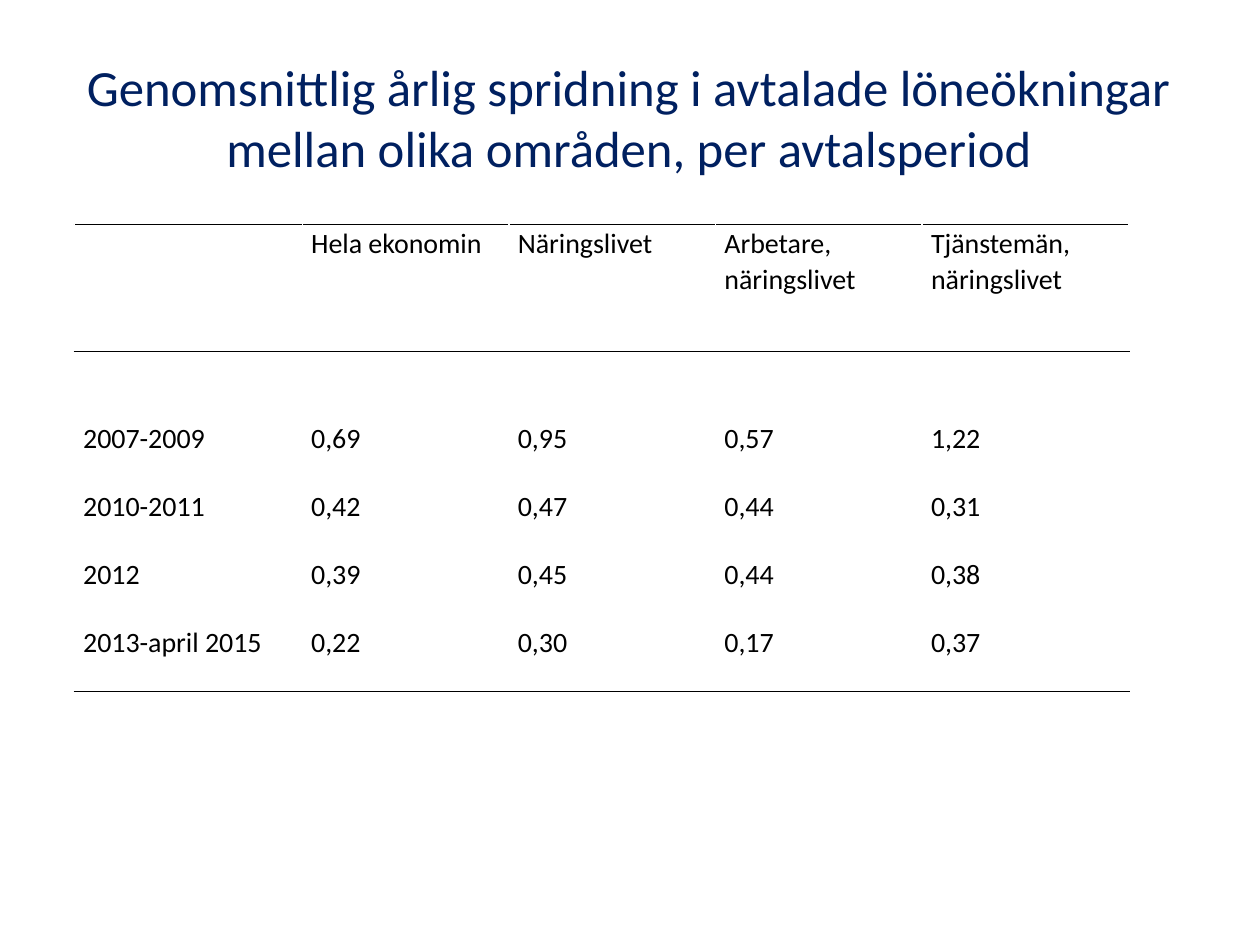
from lxml import etree
from pptx import Presentation
from pptx.dml.color import RGBColor
from pptx.enum.text import MSO_ANCHOR, PP_ALIGN
from pptx.oxml.ns import qn
from pptx.util import Inches, Pt

CENTER = PP_ALIGN.CENTER
MIDDLE = MSO_ANCHOR.MIDDLE
NAVY = RGBColor(0x00, 0x20, 0x60)
BLACK = RGBColor(0x00, 0x00, 0x00)

TITLE = "Genomsnittlig årlig spridning i avtalade löneökningar mellan olika områden, per avtalsperiod"
ROWS = [
    ["", "Hela ekonomin", "Näringslivet", "Arbetare, näringslivet", "Tjänstemän, näringslivet"],
    [""] * 5,
    ["2007-2009", "0,69", "0,95", "0,57", "1,22"],
    ["2010-2011", "0,42", "0,47", "0,44", "0,31"],
    ["2012", "0,39", "0,45", "0,44", "0,38"],
    ["2013-april 2015", "0,22", "0,30", "0,17", "0,37"],
]
COL_WIDTHS = [1.81] + [1.64] * 4
ROW_HEIGHTS = [1.01] + [0.54] * 5
RULES = {0: ("a:lnT", "a:lnB"), 1: ("a:lnT",), 5: ("a:lnB",)}
TITLE_FONT = {"name": "Calibri", "size": Pt(29), "bold": False}
CELL_FONT = {"name": "Calibri", "size": Pt(16), "bold": False}
CELL_FORMAT = {"margin_left": Inches(0.07), "margin_right": Inches(0.07),
               "margin_top": 0, "margin_bottom": 0}
PARA_FORMAT = {"line_spacing": 1.07, "space_after": Pt(8)}


def apply(target, values):
    for name, value in values.items():
        setattr(target, name, value)


def add_rule(cell, side):
    ln = etree.SubElement(cell._tc.get_or_add_tcPr(), qn(side), w=str(Pt(1)))
    fill = etree.SubElement(ln, qn("a:solidFill"))
    etree.SubElement(fill, qn("a:srgbClr"), val=str(BLACK))


prs = Presentation()
prs.slide_width, prs.slide_height = Inches(10), Inches(7.5)
s = prs.slides.add_slide(prs.slide_layouts[5])

title = s.shapes.title
apply(title, {"left": Inches(0.5), "top": Inches(0.3),
              "width": Inches(8.99), "height": Inches(1.25)})
tf = title.text_frame
tf.text = TITLE
apply(tf, {"word_wrap": True, "vertical_anchor": MIDDLE})
p = tf.paragraphs[0]
p.alignment = CENTER
apply(p.runs[0].font, TITLE_FONT)
p.runs[0].font.color.rgb = NAVY

table = s.shapes.add_table(len(ROWS), len(COL_WIDTHS), Inches(0.59), Inches(1.78),
                           Inches(sum(COL_WIDTHS)), Inches(sum(ROW_HEIGHTS))).table
apply(table, {"first_row": False, "horz_banding": False})
for col, width in zip(table.columns, COL_WIDTHS):
    col.width = Inches(width)
for row, height in zip(table.rows, ROW_HEIGHTS):
    row.height = Inches(height)

for i, texts in enumerate(ROWS):
    for j, text in enumerate(texts):
        cell = table.cell(i, j)
        apply(cell, CELL_FORMAT)
        for side in RULES.get(i, ()):
            add_rule(cell, side)
        cell.fill.background()
        p = cell.text_frame.paragraphs[0]
        apply(p, PARA_FORMAT)
        if text:
            r = p.add_run()
            r.text = text
            apply(r.font, CELL_FONT)
            r.font.color.rgb = BLACK
table.cell(1, 0).merge(table.cell(1, len(COL_WIDTHS) - 1))

prs.save("out.pptx")
